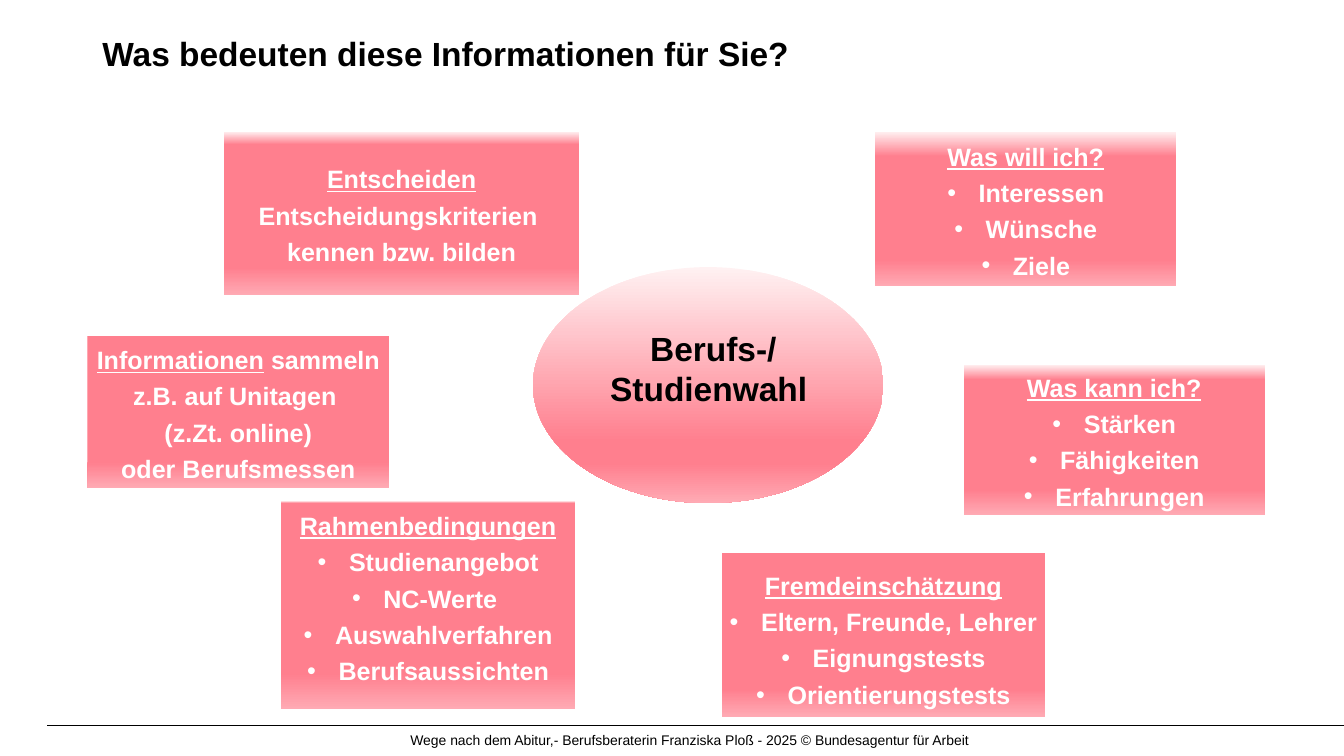
"""Build the slide on choosing a career or a course of study."""
from lxml.etree import SubElement as Sub
from pptx import Presentation as Deck
from pptx.dml.color import RGBColor as Rgb
from pptx.enum.shapes import MSO_CONNECTOR as Link, MSO_SHAPE as Form
from pptx.enum.text import MSO_ANCHOR as Anchor, MSO_AUTO_SIZE as Auto, PP_ALIGN as Align
from pptx.oxml.ns import qn
from pptx.util import Pt

HUES = {"black": "000000", "white": "FFFFFF", "pale": "FFF1F2",
        "rose": "FF7F8E", "pink": "FFAAB4"}
TITLE = {"size": Pt(24), "bold": True, "name": "Arial"}
LABEL = {"size": Pt(18), "bold": True, "name": "Arial"}
SMALL = {"size": Pt(10), "bold": False, "name": "Arial"}
EDGES = {"margin_left": 7.2, "margin_top": 3.6, "margin_right": 7.2, "margin_bottom": 3.6}
INDENT = 22.5

CARDS = [
    {"at": (201.6, 359.3, 211, 149), "rise": 1, "pad": (6, 16),
     "head": "Rahmenbedingungen", "list": True,
     "lines": ["Studienangebot", "NC-Werte ", "Auswahlverfahren", "Berufsaussichten"]},
    {"at": (160.6, 94.3, 255, 117.4), "rise": 8, "head": "Entscheiden",
     "lines": ["Entscheidungskriterien ", "kennen bzw. bilden"]},
    {"at": (627.8, 94.3, 216, 111), "rise": 16, "head": "Was will ich?", "list": True,
     "lines": ["Interessen", "Wünsche", "Ziele"]},
    {"at": (517.7, 396.7, 232, 117.4), "rise": 0, "pad": (10, 3.6),
     "head": "Fremdeinschätzung", "list": True,
     "lines": ["Eltern, Freunde, Lehrer", "Eignungstests", "Orientierungstests"]},
    {"at": (691.2, 261.4, 216, 108), "rise": 10, "head": "Was kann ich?", "list": True,
     "lines": ["Stärken", "Fähigkeiten", "Erfahrungen"]},
    {"at": (62.6, 241.2, 216.7, 108.7), "rise": 0, "head": "Informationen",
     "tail": " sammeln",
     "lines": ["z.B. auf Unitagen ", "(z.Zt. online)", "oder Berufsmessen"]},
]


def place(at):
    """Turn numbers into point lengths."""
    return [Pt(n) for n in at]


def style(item, values):
    """Set each named value on an item."""
    for key, value in values.items():
        setattr(item, key, value)


def write(para, text, look, hue, line=False):
    """Add one formatted run to a paragraph."""
    run = para.add_run()
    run.text = text
    style(run.font, look)
    run.font.underline = line
    run.font.color.rgb = Rgb.from_string(HUES[hue])


def shade(shape, rise):
    """Fill a shape from top to bottom, full rose at the rise percent."""
    shape.fill.gradient()
    shape.fill.gradient_angle = 270
    stops = shape._element.spPr.find(".//" + qn("a:gsLst"))
    for stop in list(stops):
        stops.remove(stop)
    for spot, hue in ((0, "pale"), (rise, "rose"), (83, "rose"), (100, "pink")):
        stop = Sub(stops, qn("a:gs"), pos=str(spot * 1000))
        Sub(stop, qn("a:srgbClr"), val=HUES[hue])


def add_form(slide, form, at, rise):
    """Add a shaded shape without outline or shadow."""
    shape = slide.shapes.add_shape(form, *place(at))
    shape.shadow.inherit = False
    shape.line.fill.background()
    shade(shape, rise)
    return shape


def add_dot(para):
    """Give a paragraph a bullet and a hanging indent."""
    props = para._p.get_or_add_pPr()
    props.set("marL", str(Pt(INDENT)))
    props.set("indent", str(-Pt(INDENT)))
    Sub(props, qn("a:buFont"), typeface="Arial")
    Sub(props, qn("a:buChar"), char="•")


def add_card(slide, card):
    """Add a card with an underlined head and centred lines."""
    frame = add_form(slide, Form.RECTANGLE, card["at"], card["rise"]).text_frame
    top, base = card.get("pad", (6, 3.6))
    edges = {**EDGES, "margin_top": top, "margin_bottom": base}
    style(frame, {key: Pt(n) for key, n in edges.items()})
    style(frame, {"word_wrap": False, "vertical_anchor": Anchor.MIDDLE})
    para = frame.paragraphs[0]
    para.alignment = Align.CENTER
    write(para, card["head"], LABEL, "white", True)
    if "tail" in card:
        write(para, card["tail"], LABEL, "white")
    for text in card["lines"]:
        para = frame.add_paragraph()
        if card.get("list"):
            add_dot(para)
        style(para, {"alignment": Align.CENTER, "space_before": Pt(4.5)})
        write(para, text, LABEL, "white")


def add_text(slide, at, text, look, align):
    """Add a wrapped text box in black."""
    frame = slide.shapes.add_textbox(*place(at)).text_frame
    style(frame, {key: Pt(n) for key, n in EDGES.items()})
    frame.word_wrap = True
    frame.paragraphs[0].alignment = align
    write(frame.paragraphs[0], text, look, "black")


def add_title(slide, at, text):
    """Move and fill the title placeholder."""
    title = slide.shapes.title
    style(title, dict(zip(("left", "top", "width", "height"), place(at))))
    frame = title.text_frame
    style(frame, dict.fromkeys(EDGES, 0))
    style(frame, {"word_wrap": True, "auto_size": Auto.NONE, "vertical_anchor": Anchor.TOP})
    frame.paragraphs[0].alignment = Align.LEFT
    write(frame.paragraphs[0], text, TITLE, "black")


def add_rule(slide, ends):
    """Add a thin straight line."""
    rule = slide.shapes.add_connector(Link.STRAIGHT, *place(ends))
    rule.line.width = Pt(0.5)
    rule.line.color.rgb = Rgb.from_string(HUES["black"])
    Sub(rule._element.spPr, qn("a:effectLst"))


def main():
    """Build and save the slide."""
    deck = Deck()
    style(deck, {"slide_width": Pt(964), "slide_height": Pt(542)})
    slide = deck.slides.add_slide(deck.slide_layouts[5])
    add_rule(slide, (34, 520, 964, 520))
    add_title(slide, (73.4, 24, 814, 57.6), "Was bedeuten diese Informationen für Sie?")
    add_text(slide, (287.3, 520.6, 593, 20),
             "Wege nach dem Abitur,- Berufsberaterin Franziska Ploß"
             " - 2025 © Bundesagentur für Arbeit", SMALL, Align.LEFT)
    add_form(slide, Form.OVAL, (382.3, 191.5, 251.3, 169.2), 74)
    add_text(slide, (395.3, 231.5, 226, 116), " Berufs-/ Studienwahl", TITLE, Align.CENTER)
    for card in CARDS:
        add_card(slide, card)
    deck.save("out.pptx")


if __name__ == "__main__":
    main()
